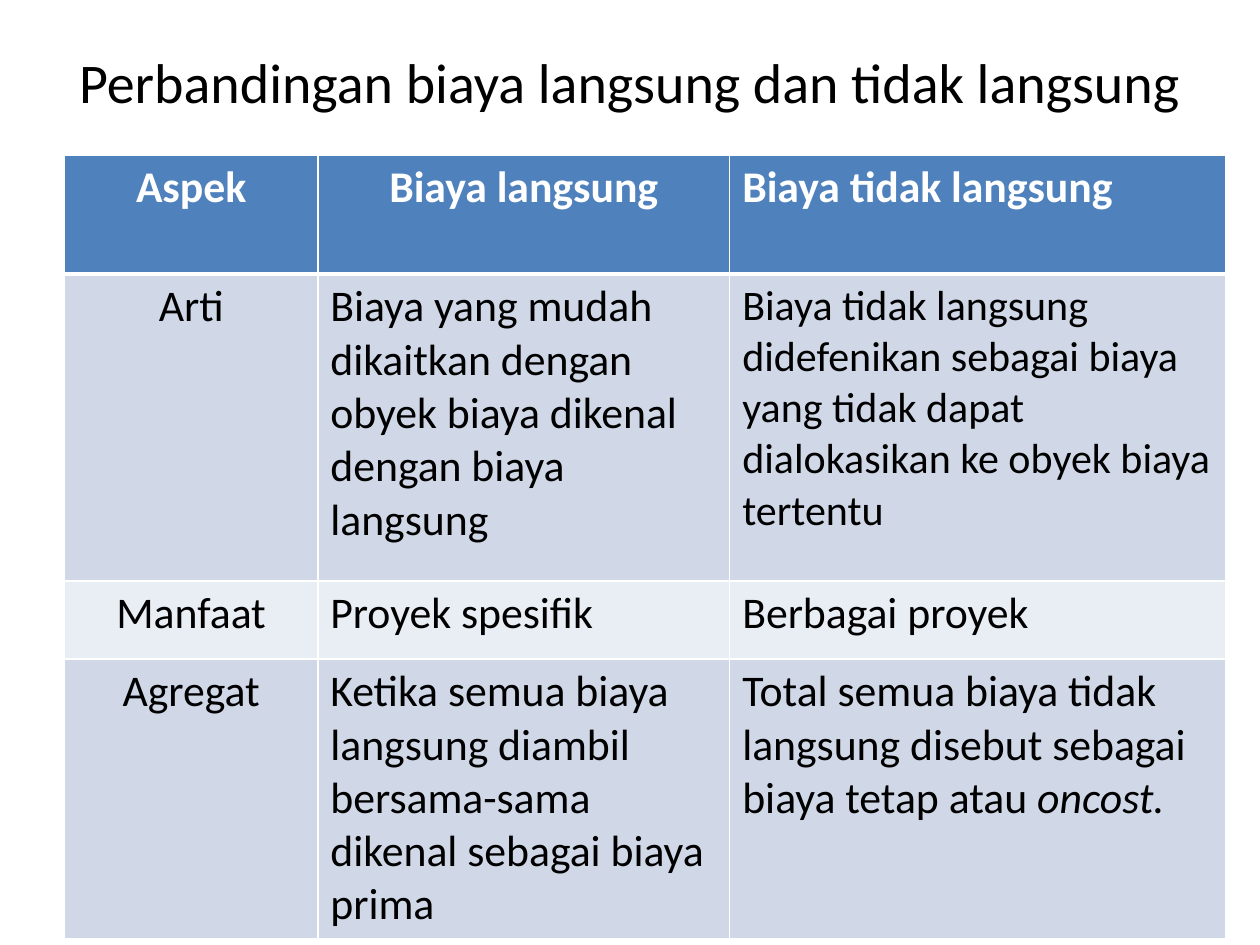
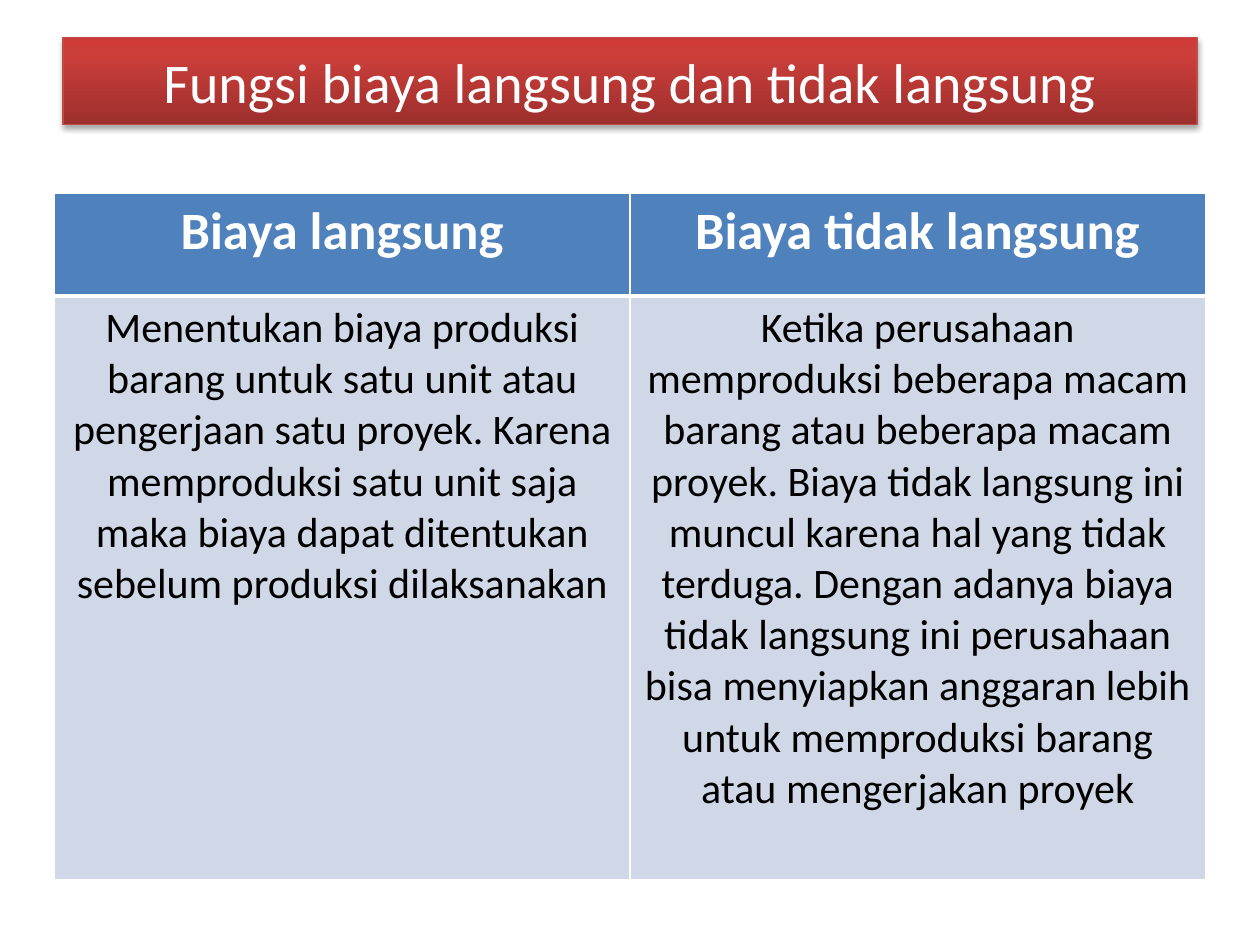
from lxml import etree
from pptx import Presentation
from pptx import util as u
from pptx.dml.color import RGBColor
from pptx.enum import text as t
from pptx.oxml import parse_xml
from pptx.oxml.ns import nsdecls

FONT = "Calibri"
COLORS = {
    "white": "FFFFFF", "black": "000000", "header": "4F81BD",
    "odd_row": "D0D8E8", "even_row": "E9EDF4", "banner_line": "BF4C48",
    "banner_dark": "9C2F2D", "banner_mid": "CB3E3A", "banner_light": "CE3B37",
}
TITLE_BOX = (36, 21.6, 648, 49.68)
CENTER, LEFT = t.PP_ALIGN.CENTER, t.PP_ALIGN.LEFT

COMPARISON = [
    ["Aspek", "Biaya langsung", "Biaya tidak langsung"],
    ["Arti",
     "Biaya yang mudah dikaitkan dengan obyek biaya dikenal dengan biaya langsung",
     "Biaya tidak langsung didefenikan sebagai biaya yang tidak dapat dialokasikan "
     "ke obyek biaya tertentu"],
    ["Manfaat", "Proyek spesifik", "Berbagai proyek"],
    ["Agregat",
     "Ketika semua biaya langsung diambil bersama-sama dikenal sebagai biaya prima",
     ("Total semua biaya tidak langsung disebut sebagai biaya tetap atau ", "oncost.")],
]
FUNCTIONS = [
    ["Biaya langsung", "Biaya tidak langsung"],
    ["Menentukan biaya produksi barang untuk satu unit atau pengerjaan satu proyek. "
     "Karena memproduksi satu unit saja maka biaya dapat ditentukan sebelum produksi "
     "dilaksanakan",
     "Ketika perusahaan memproduksi beberapa macam barang atau beberapa macam proyek. "
     "Biaya tidak langsung ini muncul karena hal yang tidak terduga. Dengan adanya biaya "
     "tidak langsung ini perusahaan bisa menyiapkan anggaran lebih untuk memproduksi "
     "barang atau mengerjakan proyek"],
]


def rgb(name):
    """Return the named colour."""
    return RGBColor.from_string(COLORS[name])


def write_text(frame, content, size, color="black", bold=False, align=CENTER):
    """Write a text, or a pair of plain and italic text, into a frame."""
    paragraph = frame.paragraphs[0]
    paragraph.alignment = align
    parts = (content,) if isinstance(content, str) else content
    for index, part in enumerate(parts):
        run = paragraph.add_run()
        run.text = part
        font = run.font
        font.name, font.size, font.bold = FONT, u.Pt(size), bold
        font.color.rgb = rgb(color)
        if index:
            font.italic = True


def add_title(slide, content, box, color="black"):
    """Place and fill the title placeholder."""
    title = slide.shapes.title
    title.left, title.top, title.width, title.height = map(u.Pt, box)
    frame = title.text_frame
    frame.auto_size = t.MSO_AUTO_SIZE.NONE
    frame.vertical_anchor = t.MSO_ANCHOR.MIDDLE
    write_text(frame, content, 32, color=color)
    return title


def style_banner(shape):
    """Give a shape the red gradient, thin outline and soft shadow."""
    stops = [(0, "banner_dark"), (80, "banner_mid"), (100, "banner_light")]
    stop_xml = "".join(
        f'<a:gs pos="{position * 1000}"><a:srgbClr val="{COLORS[name]}"/></a:gs>'
        for position, name in stops)
    properties = shape.element.spPr
    properties.append(parse_xml(
        f'<a:gradFill {nsdecls("a")} rotWithShape="1"><a:gsLst>{stop_xml}</a:gsLst>'
        '<a:lin ang="16200000" scaled="0"/></a:gradFill>'))
    shape.line.color.rgb = rgb("banner_line")
    shape.line.width = u.Pt(0.75)
    properties.append(parse_xml(
        f'<a:effectLst {nsdecls("a")}><a:outerShdw blurRad="{u.Pt(3.1)}" '
        f'dist="{u.Pt(1.8)}" dir="5400000" rotWithShape="0">'
        f'<a:srgbClr val="{COLORS["black"]}"><a:alpha val="35000"/></a:srgbClr>'
        '</a:outerShdw></a:effectLst>'))


def set_borders(cell, **widths):
    """Draw white cell borders with the given widths."""
    properties = cell._tc.get_or_add_tcPr()
    for index, side in enumerate("LRTB"):
        border = parse_xml(
            f'<a:ln{side} {nsdecls("a")} w="{u.Pt(widths.get(side, 1))}"><a:solidFill>'
            f'<a:srgbClr val="{COLORS["white"]}"/></a:solidFill></a:ln{side}>')
        properties.insert(index, border)


def add_cost_table(slide, rows, origin, widths, heights, header_size, body_format):
    """Build a table; body_format gives size and alignment of each cell."""
    box = map(u.Pt, (*origin, sum(widths), sum(heights)))
    table = slide.shapes.add_table(len(rows), len(widths), *box).table
    for column, width in zip(table.columns, widths):
        column.width = u.Pt(width)
    for row, height in zip(table.rows, heights):
        row.height = u.Pt(height)
    for r, contents in enumerate(rows):
        fill = "header" if r == 0 else "odd_row" if r % 2 else "even_row"
        for c, content in enumerate(contents):
            cell = table.cell(r, c)
            cell.fill.solid()
            cell.fill.fore_color.rgb = rgb(fill)
            set_borders(cell, T=3 if r == 1 else 1, B=3 if r == 0 else 1)
            size, align = body_format(r, c)
            if r == 0:
                write_text(cell.text_frame, content, header_size,
                           color="white", bold=True, align=align)
            else:
                write_text(cell.text_frame, content, size, align=align)


def comparison_format(row, column):
    """Return size and alignment in the comparison table."""
    centered = column == 0 or (row == 0 and column == 1)
    return 24 if (row, column) == (1, 2) else 25, CENTER if centered else LEFT


def build_comparison(slide):
    """Compare direct and indirect costs by aspect."""
    add_title(slide, "Perbandingan biaya langsung dan tidak langsung", TITLE_BOX)
    add_cost_table(slide, COMPARISON, (36.9, 88.6), (144.7, 235.4, 283.4),
                   (67.9, 175.4, 44.6, 159.8), 25, comparison_format)


def build_functions(slide):
    """Show the function of direct and indirect costs."""
    title = add_title(slide, "Fungsi biaya langsung dan tidak langsung", TITLE_BOX,
                      color="white")
    style_banner(title)
    add_cost_table(slide, FUNCTIONS, (31.2, 110.2), (328.8, 328.8), (59, 333.4), 30,
                   lambda row, column: (24, CENTER))


def main():
    """Build and save the presentation."""
    presentation = Presentation()
    presentation.slide_width, presentation.slide_height = u.Pt(720), u.Pt(540)
    for build in (build_comparison, build_functions):
        build(presentation.slides.add_slide(presentation.slide_layouts[5]))
    presentation.save("out.pptx")


if __name__ == "__main__":
    main()
